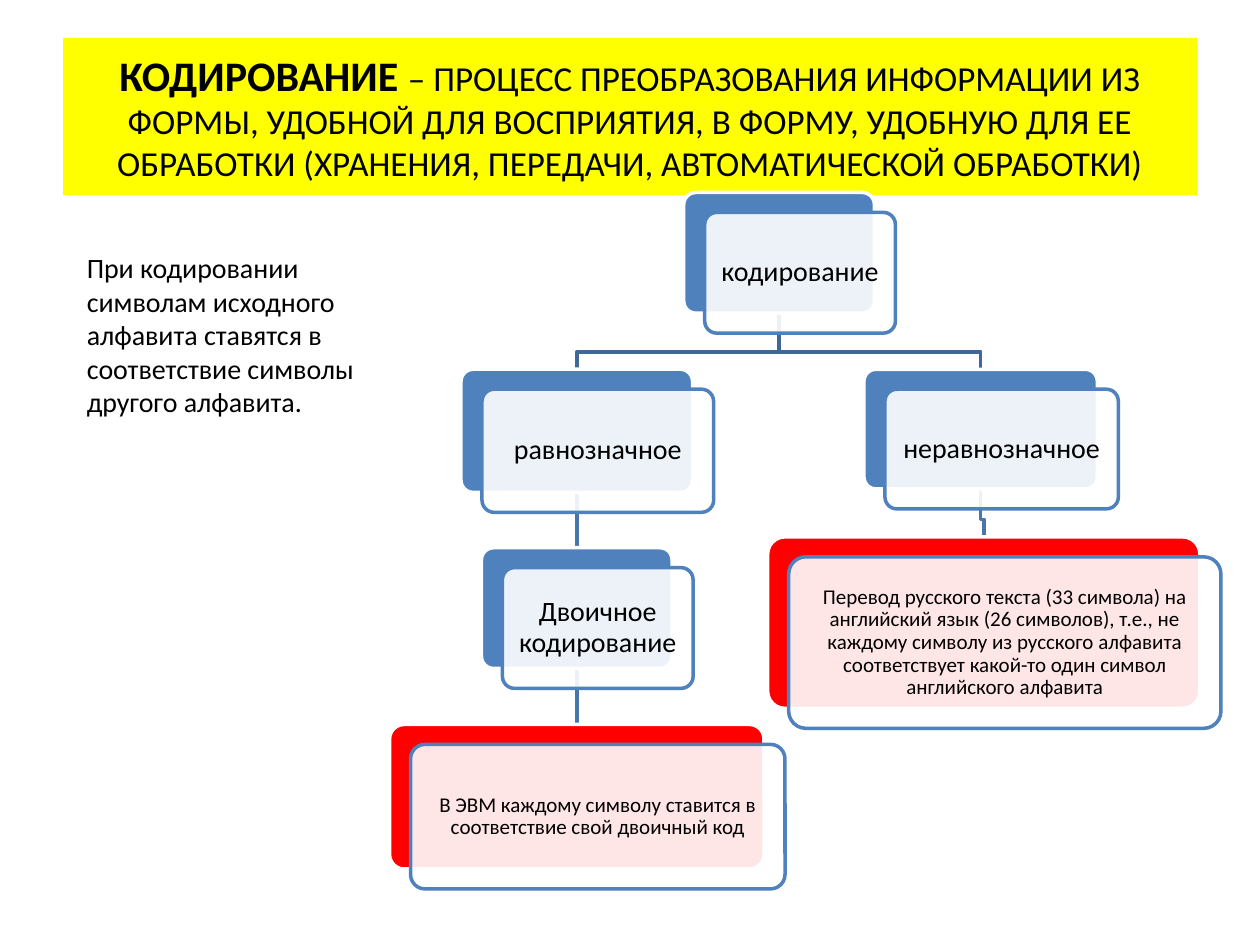
from lxml.etree import SubElement
from pptx import Presentation
from pptx.dml.color import RGBColor
from pptx.enum.shapes import MSO_CONNECTOR, MSO_SHAPE
from pptx.enum.text import MSO_ANCHOR, MSO_AUTO_SIZE, PP_ALIGN
from pptx.oxml.ns import qn
from pptx.util import Pt

BLUE, RED, WHITE = "4F81BD", "FF0000", "FFFFFF"
UPPER_LINK, LOWER_LINK = "3F6797", "4875AC"
CARD_DX, CARD_DY = 12, 11.4  # front card offset from the back plate
ELBOW_GAP = 10               # height of the bend above the child

# Tree nodes: centre x, top, width, height, plate colour, text size, text
NODES = {
    "root": (445.2, 110, 109, 69, BLUE, 16, "кодирование"),
    "equal": (329.6, 211, 132.4, 70.4, BLUE, 16, "равнозначное"),
    "binary": (329.6, 313, 109, 69, BLUE, 16, "Двоичное кодирование"),
    "computer": (329.6, 414, 214, 82.6, RED, 12,
                 "В ЭВМ каждому символу ставится в соответствие "
                 "свой двоичный код"),
    "unequal": (560.4, 211, 133.4, 68.4, BLUE, 16, "неравнозначное"),
    "translation": (562.2, 306.8, 247, 98, RED, 12,
                    "Перевод русского текста (33 символа) на английский язык "
                    "(26 символов), т.е., не каждому символу из русского "
                    "алфавита соответствует какой-то один символ английского "
                    "алфавита"),
}
LINKS = [
    ("unequal", "translation", LOWER_LINK),
    ("root", "unequal", UPPER_LINK),
    ("binary", "computer", LOWER_LINK),
    ("equal", "binary", LOWER_LINK),
    ("root", "equal", UPPER_LINK),
]


def color(value):
    return RGBColor.from_string(value)


def set_attrs(obj, values):
    for name, value in values.items():
        setattr(obj, name, value)


def add_run(p, text, size, bold=False):
    r = p.add_run()
    r.text = text
    set_attrs(r.font, {"name": "Calibri", "size": Pt(size), "bold": bold})
    r.font.color.rgb = color("000000")


def set_line(sp, line_color):
    sp.line.color.rgb = color(line_color)
    sp.line.width = Pt(2)


def add_title(slide):
    sp = slide.shapes.title
    set_attrs(sp, {"left": Pt(36), "top": Pt(21.6),
                   "width": Pt(648), "height": Pt(90)})
    sp.fill.solid()
    sp.fill.fore_color.rgb = color("FFFF00")
    tf = sp.text_frame
    set_attrs(tf, {"vertical_anchor": MSO_ANCHOR.MIDDLE, "word_wrap": True,
                   "auto_size": MSO_AUTO_SIZE.NONE})
    p = tf.paragraphs[0]
    p.alignment = PP_ALIGN.CENTER
    add_run(p, "КОДИРОВАНИЕ ", 24, bold=True)
    add_run(p, "– ПРОЦЕСС ПРЕОБРАЗОВАНИЯ ИНФОРМАЦИИ ИЗ ФОРМЫ, УДОБНОЙ ДЛЯ "
               "ВОСПРИЯТИЯ, В ФОРМУ, УДОБНУЮ ДЛЯ ЕЕ ОБРАБОТКИ (ХРАНЕНИЯ, "
               "ПЕРЕДАЧИ, АВТОМАТИЧЕСКОЙ ОБРАБОТКИ)", 20)


def add_note(slide):
    sp = slide.shapes.add_textbox(Pt(42.5), Pt(139.7), Pt(181.4), Pt(104.4))
    tf = sp.text_frame
    set_attrs(tf, {"word_wrap": True,
                   "auto_size": MSO_AUTO_SIZE.SHAPE_TO_FIT_TEXT})
    add_run(tf.paragraphs[0], "При кодировании символам исходного алфавита "
            "ставятся в соответствие символы другого алфавита.", 16)


def add_link(slide, parent, child, line_color):
    x1, top, _, height = parent[:4]
    x2, y2 = child[:2]
    y1 = top + height
    if x1 == x2:
        sp = slide.shapes.add_connector(MSO_CONNECTOR.STRAIGHT,
                                        Pt(x1), Pt(y1), Pt(x2), Pt(y2))
        SubElement(sp._element.spPr, qn("a:effectLst"))
        set_line(sp, line_color)
        return
    bend = y2 - ELBOW_GAP
    builder = slide.shapes.build_freeform(Pt(x1), Pt(y1))
    builder.add_line_segments([(Pt(x1), Pt(bend)), (Pt(x2), Pt(bend)),
                               (Pt(x2), Pt(y2))], close=False)
    sp = builder.convert_to_shape()
    sp.shadow.inherit = False
    sp.fill.background()
    set_line(sp, line_color)


def add_plate(slide, x, y, w, h, fill, line_color):
    sp = slide.shapes.add_shape(MSO_SHAPE.ROUNDED_RECTANGLE,
                                Pt(x), Pt(y), Pt(w), Pt(h))
    sp.adjustments[0] = 0.1
    sp.shadow.inherit = False
    sp.fill.solid()
    sp.fill.fore_color.rgb = color(fill)
    set_line(sp, line_color)
    return sp


def add_node(slide, center, y, w, h, fill, size, text):
    x = center - w / 2
    add_plate(slide, x, y, w, h, fill, WHITE)
    card = add_plate(slide, x + CARD_DX, y + CARD_DY, w, h, WHITE, BLUE)
    # Let the plate show through the card
    clr = card._element.spPr.find(qn("a:solidFill")).find(qn("a:srgbClr"))
    SubElement(clr, qn("a:alpha")).set("val", "90000")
    tf = card.text_frame
    set_attrs(tf, {"word_wrap": True, "vertical_anchor": MSO_ANCHOR.MIDDLE})
    inset = Pt(size * 0.3)
    set_attrs(tf, {"margin_" + side: inset
                   for side in ("left", "right", "top", "bottom")})
    p = tf.paragraphs[0]
    set_attrs(p, {"alignment": PP_ALIGN.CENTER, "line_spacing": 0.9})
    add_run(p, text, size)


def main():
    prs = Presentation()
    prs.slide_width, prs.slide_height = Pt(720), Pt(540)
    slide = prs.slides.add_slide(prs.slide_layouts[5])

    # Definition and explanation
    add_title(slide)
    add_note(slide)

    # Tree of coding types: links behind, nodes in front
    for parent, child, line_color in LINKS:
        add_link(slide, NODES[parent], NODES[child], line_color)
    for node in NODES.values():
        add_node(slide, *node)

    prs.save("out.pptx")


if __name__ == "__main__":
    main()
